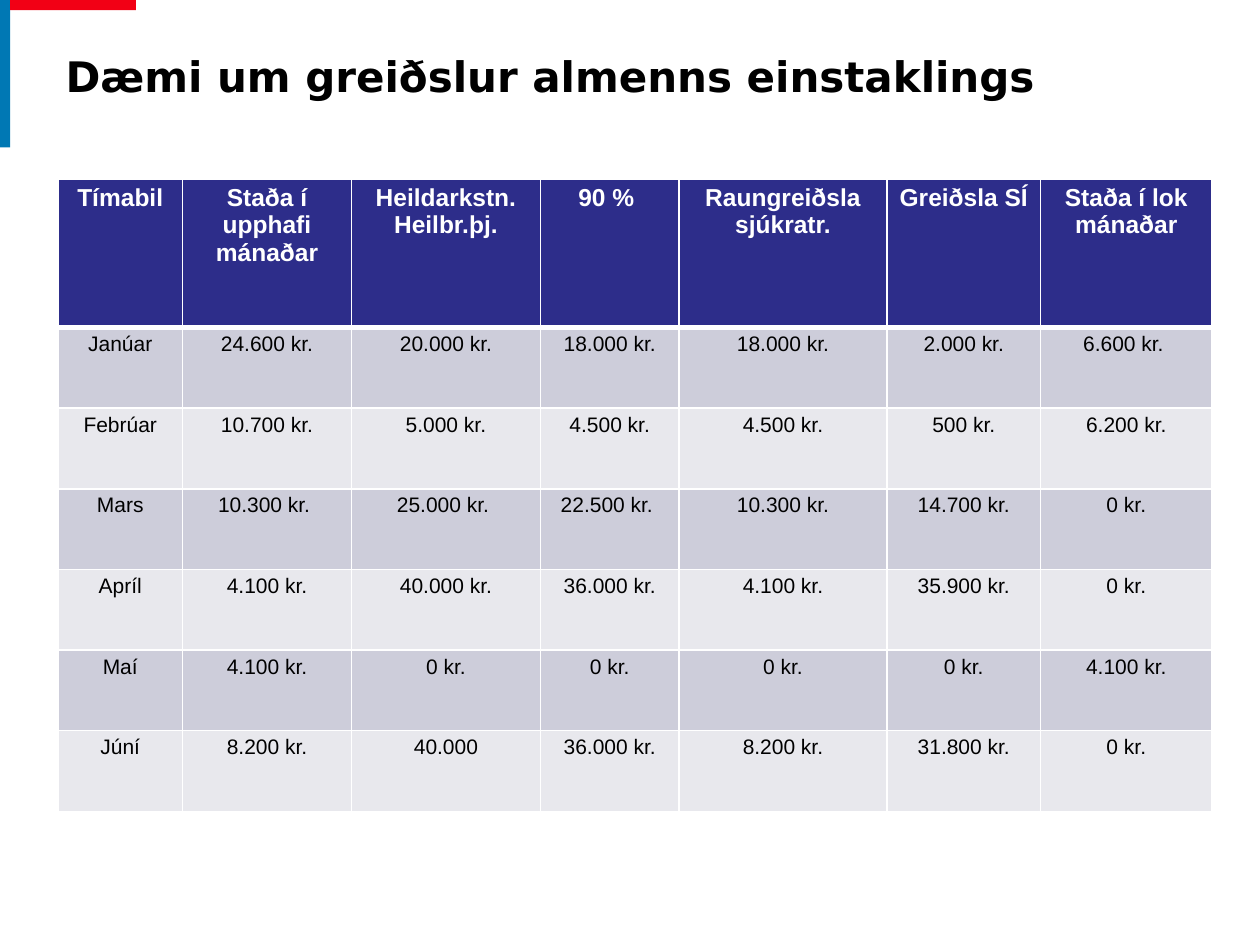
"""Build a slide with a table of monthly payments for an ordinary individual."""
from lxml import etree
from pptx import Presentation
from pptx import util as u
from pptx.dml.color import RGBColor
from pptx.enum import shapes, text
from pptx.oxml import ns

BLACK = RGBColor(0x00, 0x00, 0x00)
WHITE = RGBColor(0xFF, 0xFF, 0xFF)
BLUE = RGBColor(0x00, 0x78, 0xB4)
RED = RGBColor(0xF2, 0x00, 0x15)
NAVY = RGBColor(0x2D, 0x2D, 0x8A)
BANDS = (RGBColor(0xE8, 0xE8, 0xED), RGBColor(0xCD, 0xCD, 0xDA))

COLUMN_WIDTHS = (0.99, 1.34, 1.5, 1.1, 1.65, 1.22, 1.36)
HEADER_HEIGHT, MONTH_HEIGHT = 1.18, 0.64
PAYMENTS = (
    ("Tímabil", "Staða í upphafi mánaðar", "Heildarkstn. Heilbr.þj.", "90 % ",
     "Raungreiðsla\vsjúkratr.", "Greiðsla SÍ", "Staða í lok mánaðar"),
    ("Janúar", "24.600 kr.", "20.000 kr.", "18.000 kr.", "18.000 kr.", "2.000 kr.", "6.600 kr. "),
    ("Febrúar", "10.700 kr.", "5.000 kr.", "4.500 kr.", "4.500 kr.", "500 kr.", "6.200 kr."),
    ("Mars", "10.300 kr. ", "25.000 kr. ", "22.500 kr. ", "10.300 kr.", "14.700 kr.", "0 kr."),
    ("Apríl", "4.100 kr.", "40.000 kr.", "36.000 kr.", "4.100 kr.", "35.900 kr.", "0 kr."),
    ("Maí", "4.100 kr.", "0 kr.", "0 kr.", "0 kr.", "0 kr.", "4.100 kr."),
    ("Júní", "8.200 kr.", "40.000", "36.000 kr.", "8.200 kr.", "31.800 kr.", "0 kr."),
)


def write(frame, wording, size, font="Arial", color=BLACK, bold=False,
          align=text.PP_ALIGN.CENTER):
    """Put formatted wording into a text frame."""
    paragraph = frame.paragraphs[0]
    paragraph.text = wording
    paragraph.alignment = align
    for run in paragraph.runs:
        run.font.size = u.Pt(size)
        run.font.name = font
        run.font.bold = bold
        run.font.color.rgb = color


def add_border(cell, side, width):
    """Draw one white edge of a table cell."""
    edge = etree.SubElement(cell._tc.get_or_add_tcPr(), ns.qn(f"a:ln{side}"),
                            w=str(u.Pt(width)))
    fill = etree.SubElement(edge, ns.qn("a:solidFill"))
    etree.SubElement(fill, ns.qn("a:srgbClr"), val=str(WHITE))


class PaymentSlide:
    """Hold the style and the current slide."""

    heading_font = "DejaVu Sans"
    body_font = "Arial"

    def __init__(self, deck):
        self.slide = deck.slides.add_slide(deck.slide_layouts[5])

    def bar(self, left, top, width, height, color):
        """Add a plain coloured bar."""
        bar = self.slide.shapes.add_shape(
            shapes.MSO_SHAPE.RECTANGLE, *map(u.Inches, (left, top, width, height)))
        bar.shadow.inherit = False
        bar.fill.solid()
        bar.fill.fore_color.rgb = color
        bar.line.fill.background()

    def title(self, wording, left, top, width, height):
        """Place and format the title."""
        title = self.slide.shapes.title
        title.left, title.top, title.width, title.height = map(
            u.Inches, (left, top, width, height))
        frame = title.text_frame
        frame.word_wrap = True
        frame.auto_size = text.MSO_AUTO_SIZE.NONE
        frame.vertical_anchor = text.MSO_ANCHOR.MIDDLE
        frame.margin_bottom = u.Inches(0.44)
        write(frame, wording, 24, self.heading_font, bold=True,
              align=text.PP_ALIGN.LEFT)

    def table(self, rows, left, top, widths, heights):
        """Add a table with a dark header and banded rows."""
        table = self.slide.shapes.add_table(
            len(rows), len(widths), u.Inches(left), u.Inches(top),
            u.Inches(sum(widths)), u.Inches(sum(heights))).table
        for column, width in zip(table.columns, widths):
            column.width = u.Inches(width)
        for index, (row, height) in enumerate(zip(table.rows, heights)):
            row.height = u.Inches(height)
            for cell, wording in zip(row.cells, rows[index]):
                self.cell(cell, wording, index)

    def cell(self, cell, wording, row):
        """Fill and format one table cell."""
        header = row == 0
        cell.margin_left = cell.margin_right = u.Inches(0.08)
        cell.margin_top = cell.margin_bottom = u.Inches(0.04)
        edges = {"L": 1, "R": 1, "T": 3 if row == 1 else 1, "B": 3 if header else 1}
        for side, width in edges.items():
            add_border(cell, side, width)
        cell.fill.solid()
        cell.fill.fore_color.rgb = NAVY if header else BANDS[row % 2]
        write(cell.text_frame, wording, 14 if header else 12, self.body_font,
              WHITE if header else BLACK, bold=header)


def main():
    deck = Presentation()
    deck.slide_width, deck.slide_height = u.Inches(10), u.Inches(7.5)
    page = PaymentSlide(deck)
    page.bar(0, 0, 0.08, 1.17, BLUE)
    page.bar(0.08, 0, 1, 0.08, RED)
    page.title("Dæmi um greiðslur almenns einstaklings", 0.42, 0.17, 9.17, 1.25)
    heights = [HEADER_HEIGHT] + [MONTH_HEIGHT] * (len(PAYMENTS) - 1)
    page.table(PAYMENTS, 0.46, 1.42, COLUMN_WIDTHS, heights)
    deck.save("out.pptx")


if __name__ == "__main__":
    main()
